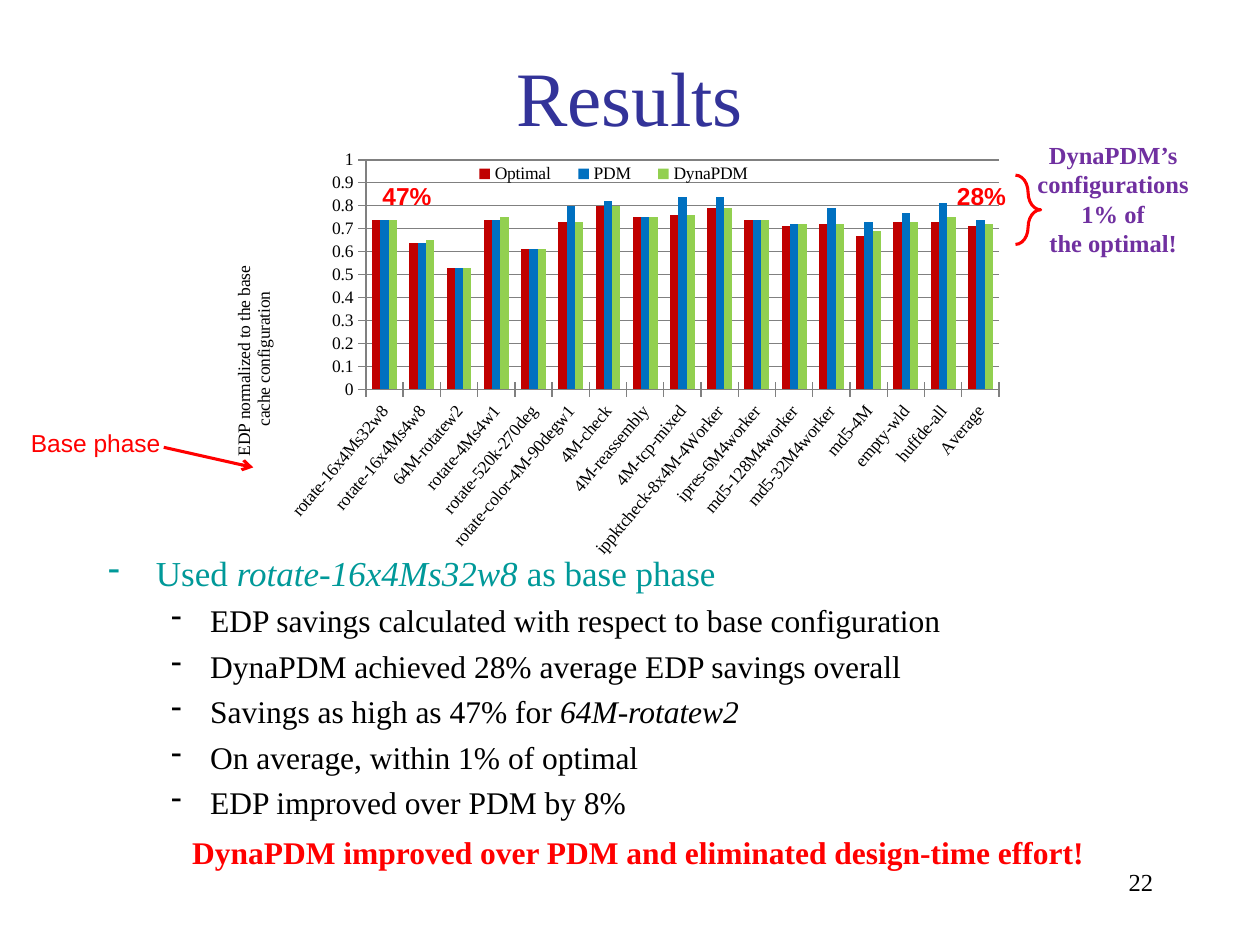
from dataclasses import dataclass

from lxml.etree import SubElement
from pptx import Presentation
from pptx.chart.data import CategoryChartData
from pptx.dml.color import RGBColor
from pptx.enum.chart import XL_CHART_TYPE, XL_LEGEND_POSITION, XL_TICK_MARK
from pptx.enum.shapes import MSO_CONNECTOR, MSO_SHAPE
from pptx.enum.text import MSO_ANCHOR, PP_ALIGN
from pptx.oxml import parse_xml
from pptx.oxml.ns import nsdecls, qn
from pptx.util import Inches, Pt


@dataclass(frozen=True)
class Theme:
    """Colours, fonts and type sizes of the slide."""
    serif: str = "Times New Roman"
    sans: str = "Arial"
    title: str = "333399"
    lead: str = "009999"
    text: str = "000000"
    alert: str = "FF0000"
    remark: str = "7030A0"
    grid: str = "808080"
    series: tuple = ("C00000", "0070C0", "92D050")
    title_size: int = 44
    lead_size: int = 20
    point_size: int = 18
    note_size: int = 14
    chart_size: int = 10
    stroke: float = 1.75


THEME = Theme()

EDP = [
    ("rotate-16x4Ms32w8", 0.74, 0.74, 0.74),
    ("rotate-16x4Ms4w8", 0.64, 0.64, 0.65),
    ("64M-rotatew2", 0.53, 0.53, 0.53),
    ("rotate-4Ms4w1", 0.74, 0.74, 0.75),
    ("rotate-520k-270deg", 0.61, 0.61, 0.61),
    ("rotate-color-4M-90degw1", 0.73, 0.8, 0.73),
    ("4M-check", 0.8, 0.82, 0.8),
    ("4M-reassembly", 0.75, 0.75, 0.75),
    ("4M-tcp-mixed", 0.76, 0.84, 0.76),
    ("ippktcheck-8x4M-4Worker", 0.79, 0.84, 0.79),
    ("ipres-6M4worker", 0.74, 0.74, 0.74),
    ("md5-128M4worker", 0.71, 0.72, 0.72),
    ("md5-32M4worker", 0.72, 0.79, 0.72),
    ("md5-4M", 0.67, 0.73, 0.69),
    ("empty-wld", 0.73, 0.77, 0.73),
    ("huffde-all", 0.73, 0.81, 0.75),
    ("Average", 0.71, 0.74, 0.72),
]

FINDINGS = [
    (0, [("Used ", False), ("rotate-16x4Ms32w8 ", True), ("as base phase", False)]),
    (1, [("EDP savings calculated with respect to base configuration", False)]),
    (1, [("DynaPDM achieved 28% average EDP savings overall", False)]),
    (1, [("Savings as high as 47% for ", False), ("64M-rotatew2", True)]),
    (1, [("On average, within 1% of optimal", False)]),
    (1, [("EDP improved over PDM by 8%", False)]),
]


def set_font(font, size, color, name=THEME.serif, bold=False):
    """Apply one type style."""
    font.size, font.name, font.bold = Pt(size), name, bold
    font.color.rgb = RGBColor.from_string(color)


def set_stroke(line, color, width):
    """Apply one line style."""
    line.color.rgb = RGBColor.from_string(color)
    line.width = Pt(width)


def set_layout(parent, index, **fractions):
    """Give a chart part a fixed place, in fractions of the chart."""
    for old in parent.findall(qn("c:layout")):
        parent.remove(old)
    layout = parse_xml(f"<c:layout {nsdecls('c')}><c:manualLayout/></c:layout>")
    for tag, value in fractions.items():
        SubElement(layout[0], qn(f"c:{tag}")).set("val", str(value))
    parent.insert(index, layout)


def add_title(slide, box):
    """Place the slide title."""
    title = slide.shapes.title
    title.left, title.top, title.width, title.height = map(Inches, box)
    frame = title.text_frame
    frame.text = "Results"
    frame.vertical_anchor = MSO_ANCHOR.MIDDLE
    frame.paragraphs[0].alignment = PP_ALIGN.CENTER
    set_font(frame.paragraphs[0].font, THEME.title_size, THEME.title)


def add_label(slide, box, text, size, color, align=PP_ALIGN.CENTER, wrap=False, **style):
    """Place a short text, one paragraph per line."""
    frame = slide.shapes.add_textbox(*map(Inches, box)).text_frame
    frame.word_wrap = wrap
    frame.text = text
    for paragraph in frame.paragraphs:
        paragraph.alignment = align
        set_font(paragraph.font, size, color, **style)


def add_findings(slide, box):
    """Place the dashed list of findings."""
    frame = slide.shapes.add_textbox(*map(Inches, box)).text_frame
    frame.word_wrap = True
    styles = [(0.38, 0.38, THEME.lead_size, THEME.lead),
              (0.81, 0.31, THEME.point_size, THEME.text)]
    for index, (level, pieces) in enumerate(FINDINGS):
        paragraph = frame.add_paragraph() if index else frame.paragraphs[0]
        margin, hanging, size, color = styles[level]
        paragraph.level = level
        if index:
            paragraph.space_before = Pt(4.4)
        properties = paragraph._p.get_or_add_pPr()
        properties.set("marL", str(Inches(margin)))
        properties.set("indent", str(-Inches(hanging)))
        SubElement(properties, qn("a:buChar")).set("char", "-")
        set_font(paragraph.font, size, color)
        for text, italic in pieces:
            run = paragraph.add_run()
            run.text = text
            run.font.italic = italic


def add_edp_chart(slide, box):
    """Place the column chart of normalized EDP."""
    data = CategoryChartData()
    names, *columns = zip(*EDP)
    data.categories = names
    for name, values in zip(("Optimal", "PDM", "DynaPDM"), columns):
        data.add_series(name, values)
    chart = slide.shapes.add_chart(
        XL_CHART_TYPE.COLUMN_CLUSTERED, *map(Inches, box), data).chart
    chart.has_title = False
    set_font(chart.font, THEME.chart_size, THEME.text)

    plot = chart.plots[0]
    plot.vary_by_categories = False
    plot.gap_width, plot.overlap = 150, 0
    for series, color in zip(plot.series, THEME.series):
        series.format.fill.solid()
        series.format.fill.fore_color.rgb = RGBColor.from_string(color)

    values = chart.value_axis
    values.minimum_scale, values.maximum_scale, values.major_unit = 0, 1, 0.1
    values.has_major_gridlines = True
    values.tick_labels.number_format = "General"
    values.tick_labels.number_format_is_linked = False
    for axis in (values, chart.category_axis):
        axis.major_tick_mark = XL_TICK_MARK.CROSS
        set_font(axis.tick_labels.font, THEME.chart_size, THEME.text)
        set_stroke(axis.format.line, THEME.grid, 0.75)
    set_stroke(values.major_gridlines.format.line, THEME.grid, 0.75)
    chart.category_axis._element.find(qn("c:txPr")).find(qn("a:bodyPr")).set("rot", "-3000000")

    caption = values.axis_title.text_frame
    caption.text = "EDP normalized to the base \ncache configuration"
    for paragraph in caption.paragraphs:
        set_font(paragraph.font, THEME.chart_size, THEME.text)
    caption._txBody.find(qn("a:bodyPr")).set("rot", "-5400000")

    chart.has_legend = True
    legend = chart.legend
    legend.position = XL_LEGEND_POSITION.TOP
    legend.include_in_layout = True
    set_font(legend.font, THEME.chart_size, THEME.text)

    set_layout(plot._element.getparent(), 0, layoutTarget="inner", xMode="edge",
               yMode="edge", x=0.208, y=0.125, w=0.772, h=0.495)
    set_layout(values.axis_title._element, 1, xMode="edge", yMode="edge", x=0.04, y=0.336)
    set_layout(legend._element, 1, xMode="edge", yMode="edge", x=0.32, y=0.13, w=0.38, h=0.05)


def add_base_phase(slide, box):
    """Place the base phase label with its arrow."""
    left, top, width, height = box
    add_label(slide, (left, top, 1.24, 0.34), "Base phase", THEME.note_size,
              THEME.alert, name=THEME.sans)
    arrow = slide.shapes.add_connector(
        MSO_CONNECTOR.STRAIGHT, Inches(left + 1.16), Inches(top + 0.2),
        Inches(left + width), Inches(top + height))
    set_stroke(arrow.line, THEME.alert, THEME.stroke)
    SubElement(arrow.line._get_or_add_ln(), qn("a:tailEnd")).set("type", "arrow")
    SubElement(arrow._element.spPr, qn("a:effectLst"))


def add_optimal_remark(slide, box):
    """Place the brace and the remark beside it."""
    left, top, width, height = box
    brace = slide.shapes.add_shape(
        MSO_SHAPE.RIGHT_BRACE, Inches(left), Inches(top + 0.33), Inches(0.2), Inches(0.55))
    brace.adjustments[0] = 0.93
    brace.shadow.inherit = False
    brace.fill.background()
    set_stroke(brace.line, THEME.alert, THEME.stroke)
    add_label(slide, (left + 0.07, top, width - 0.07, height),
              "DynaPDM’s\nconfigurations\n1% of\nthe optimal!",
              THEME.note_size, THEME.remark, bold=True)


def main():
    """Build and save the results slide."""
    deck = Presentation()
    deck.slide_width, deck.slide_height = Inches(10), Inches(7.5)
    slide = deck.slides.add_slide(deck.slide_layouts[5])
    add_title(slide, (0.75, 0.28, 8.5, 0.96))
    add_findings(slide, (0.76, 4.33, 8.5, 2.41))
    add_label(slide, (7.17, 6.83, 2.08, 0.5), "22", THEME.note_size, THEME.text,
              PP_ALIGN.RIGHT, wrap=True)
    add_edp_chart(slide, (1.55, 0.81, 6.51, 3.68))
    add_base_phase(slide, (0.14, 3.35, 1.87, 0.36))
    for left, saving in ((2.89, "47%"), (7.45, "28%")):
        add_label(slide, (left, 1.39, 0.68, 0.34), saving, THEME.note_size,
                  THEME.alert, wrap=True, name=THEME.sans, bold=True)
    add_label(slide, (1.39, 6.56, 7.35, 0.4),
              "DynaPDM improved over PDM and eliminated design-time effort!",
              THEME.point_size, THEME.alert, bold=True)
    add_optimal_remark(slide, (8.06, 1.06, 1.48, 1.04))
    deck.save("out.pptx")


if __name__ == "__main__":
    main()
